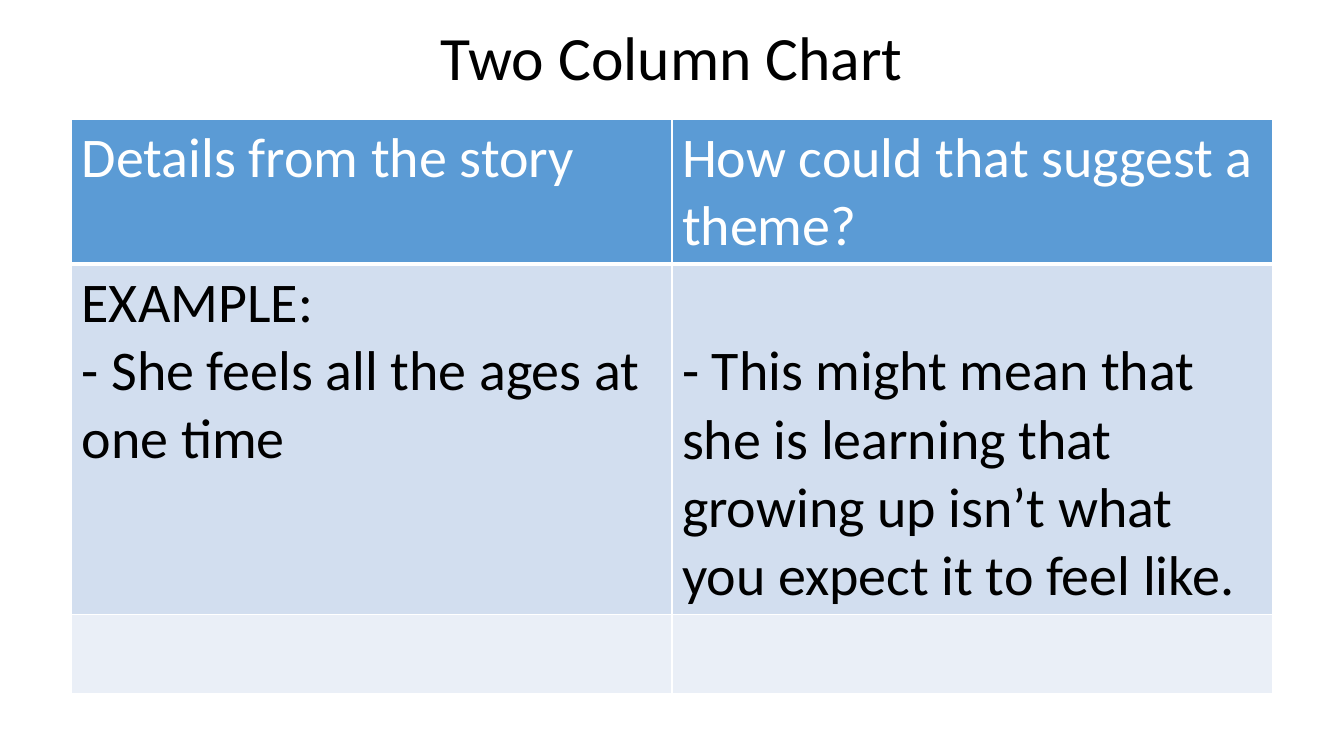
from dataclasses import dataclass

from lxml.etree import SubElement
from pptx import Presentation
from pptx.dml.color import RGBColor as Rgb
from pptx.enum.text import MSO_ANCHOR as Anchor, PP_ALIGN as Align
from pptx.oxml.ns import qn
from pptx.util import Inches, Pt


@dataclass(frozen=True)
class Theme:
    font: str = "Calibri"
    title_size: int = 44
    cell_size: int = 40
    ink: str = "000000"
    white: str = "FFFFFF"
    header: str = "5B9BD5"
    example: str = "D2DEEF"
    empty: str = "EAEFF7"
    rule: int = 1
    header_rule: int = 3


@dataclass(frozen=True)
class Row:
    height: float  # inches
    fill: str
    ink: str
    bottom_rule: int
    texts: tuple[tuple[str, ...], ...]  # paragraphs of each column
    tops: tuple[float, float] = (0.05, 0.05)  # top margins, inches


THEME = Theme()
WIDTH, HEIGHT = 13.33, 7.5
COLUMNS = 2

ROWS = (
    Row(1.44, THEME.header, THEME.white, THEME.header_rule,
        (("Details from the story",), ("How could that suggest a theme?",))),
    # The answer starts one line lower, level with the detail it explains
    Row(3.48, THEME.example, THEME.ink, THEME.rule,
        (("EXAMPLE:", "- She feels all the ages at one time"),
         ("- This might mean that she is learning that growing up "
          "isn’t what you expect it to feel like.",)),
        (0.05, 0.73)),
    Row(0.78, THEME.empty, THEME.ink, THEME.rule, ((), ())),
)


def across(share: float) -> int:
    return Inches(WIDTH * share)


def down(share: float) -> int:
    return Inches(HEIGHT * share)


def write(frame, lines: tuple[str, ...], size: int, ink: str) -> None:
    """Put one paragraph per line into a text frame."""
    font_format = {"name": THEME.font, "size": Pt(size), "bold": False}
    for index, line in enumerate(lines):
        paragraph = frame.add_paragraph() if index else frame.paragraphs[0]
        run = paragraph.add_run()
        run.text = line
        for key, value in font_format.items():
            setattr(run.font, key, value)
        run.font.color.rgb = Rgb.from_string(ink)


def add_rules(cell, bottom: int) -> None:
    """Draw white borders round a cell."""
    properties = cell._tc.get_or_add_tcPr()
    widths = {"a:lnL": THEME.rule, "a:lnR": THEME.rule,
              "a:lnT": THEME.rule, "a:lnB": bottom}
    for tag, width in widths.items():
        line = SubElement(properties, qn(tag), w=str(Pt(width)))
        fill = SubElement(line, qn("a:solidFill"))
        SubElement(fill, qn("a:srgbClr"), val=THEME.white)


def add_heading(slide) -> None:
    heading = slide.shapes.add_textbox(across(0.07), 0, across(0.86), down(0.16))
    frame = heading.text_frame
    frame_format = {"word_wrap": True, "vertical_anchor": Anchor.MIDDLE}
    for key, value in frame_format.items():
        setattr(frame, key, value)
    write(frame, ("Two Column Chart",), THEME.title_size, THEME.ink)
    paragraph_format = {"alignment": Align.CENTER, "line_spacing": 0.9}
    for key, value in paragraph_format.items():
        setattr(frame.paragraphs[0], key, value)


def add_story_table(slide) -> None:
    total = Inches(sum(row.height for row in ROWS))
    story = slide.shapes.add_table(len(ROWS), COLUMNS, Inches(0.71), Inches(1.18),
                                   Inches(11.91), total).table
    for r, row in enumerate(ROWS):
        story.rows[r].height = Inches(row.height)
        for c, (lines, top) in enumerate(zip(row.texts, row.tops)):
            cell = story.cell(r, c)
            add_rules(cell, row.bottom_rule)
            cell.fill.solid()
            cell.fill.fore_color.rgb = Rgb.from_string(row.fill)
            cell.margin_top = Inches(top)
            write(cell.text_frame, lines, THEME.cell_size, row.ink)


def main() -> None:
    deck = Presentation()
    deck.slide_width, deck.slide_height = across(1), down(1)
    slide = deck.slides.add_slide(deck.slide_layouts[6])
    add_heading(slide)
    add_story_table(slide)
    deck.save("out.pptx")


if __name__ == "__main__":
    main()
